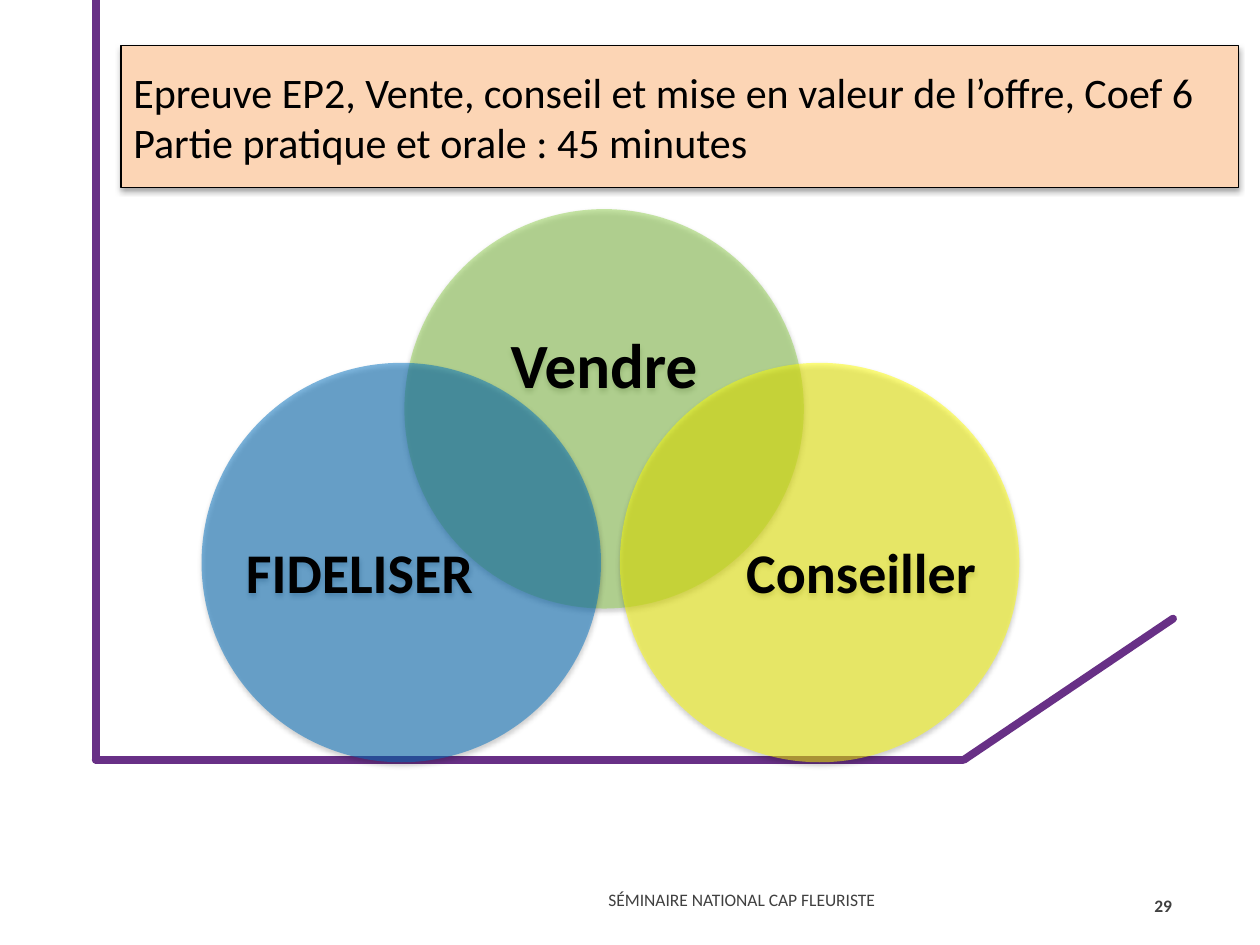
from lxml.etree import SubElement
from pptx import Presentation
from pptx.dml.color import RGBColor
from pptx.enum.shapes import MSO_CONNECTOR, MSO_SHAPE
from pptx.enum.text import MSO_ANCHOR, PP_ALIGN
from pptx.oxml.ns import qn
from pptx.util import Inches, Pt

THEME = {
    "font": "Calibri", "text": "000000", "muted": "404040",
    "frame": "683086", "banner": "FCD5B5",
    "green": "92D050", "yellow": "FFFF00", "blue": "0070C0",
    "title_size": 24, "small_size": 10, "frame_width": 4.5,
}

TITLE = ("Epreuve EP2, Vente, conseil et mise en valeur de l’offre, Coef 6\v"
         "Partie pratique et orale : 45 minutes")
FOOTER = "SÉMINAIRE NATIONAL CAP FLEURISTE"
PAGE_NUMBER = "29"

FRAME_LINES = [
    ((0.76, 6.03), (7.64, 6.03)),
    ((7.65, 6.03), (9.31, 4.91)),
    ((0.76, 6.02), (0.76, 0)),
]

DIAMETER = 3.17
# label, colour, size, (left, top), shift of the label from the circle's centre
CIRCLES = [
    ("Vendre", "green", 36, (3.21, 1.66), (0, -0.32)),
    ("Conseiller", "yellow", 32, (4.92, 2.88), (0.33, 0.1)),
    ("FIDELISER", "blue", 32, (1.6, 2.88), (-0.33, 0.1)),
]


def color(name):
    return RGBColor.from_string(THEME[name])


def add_shadow(shape, opacity, distance):
    """Drop a soft black shadow straight down; opacity in percent."""
    shape.shadow.inherit = False
    effects = shape._element.spPr.find(qn("a:effectLst"))
    shadow = SubElement(effects, qn("a:outerShdw"), blurRad=str(Pt(3.1)),
                        dist=str(Pt(distance)), dir="5400000", rotWithShape="0")
    black = SubElement(shadow, qn("a:srgbClr"), val="000000")
    SubElement(black, qn("a:alpha"), val=str(opacity * 1000))


def fill_shape(shape, name, opacity=100):
    shape.fill.solid()
    shape.fill.fore_color.rgb = color(name)
    if opacity < 100:
        tint = shape._element.spPr.find(qn("a:solidFill"))[0]
        SubElement(tint, qn("a:alpha"), val=str(opacity * 1000))


def write(shape, text, size, tone="text", bold=False, align=PP_ALIGN.LEFT,
          spacing=None, wrap=True):
    frame = shape.text_frame
    frame.word_wrap = wrap
    frame.vertical_anchor = MSO_ANCHOR.MIDDLE
    frame.text = text
    para = frame.paragraphs[0]
    para.alignment = align
    para.line_spacing = spacing
    for span in para.runs:
        span.font.color.rgb = color(tone)
        formats = {"name": THEME["font"], "size": Pt(size), "bold": bold}
        for key, value in formats.items():
            setattr(span.font, key, value)


def add_frame_line(page, start, end):
    line = page.shapes.add_connector(
        MSO_CONNECTOR.STRAIGHT, *map(Inches, start + end))
    line.line.color.rgb = color("frame")
    line.line.width = Pt(THEME["frame_width"])
    properties = line._element.spPr
    properties.find(qn("a:ln")).set("cap", "rnd")
    SubElement(properties, qn("a:effectLst"))


def add_circle(page, label, tone, size, corner, shift):
    circle = page.shapes.add_shape(
        MSO_SHAPE.OVAL, *map(Inches, corner + (DIAMETER, DIAMETER)))
    fill_shape(circle, tone, opacity=50)
    circle.line.fill.background()
    add_shadow(circle, 38, 1.6)
    write(circle, label, size, bold=True, align=PP_ALIGN.CENTER,
          spacing=0.9, wrap=False)
    # A margin on one side moves the centred label by half of it
    across, down = shift
    margins = {"left": across, "right": -across, "top": down, "bottom": -down}
    for side, offset in margins.items():
        setattr(circle.text_frame, f"margin_{side}", Inches(max(2 * offset, 0)))


def add_banner(page):
    banner = page.shapes.add_shape(
        MSO_SHAPE.RECTANGLE, *map(Inches, (0.96, 0.36, 8.87, 1.13)))
    fill_shape(banner, "banner")
    banner.line.color.rgb = color("text")
    banner.line.width = Pt(0.75)
    add_shadow(banner, 35, 1.8)
    write(banner, TITLE, THEME["title_size"])


def main():
    deck = Presentation()
    deck.slide_width, deck.slide_height = Inches(10), Inches(7.5)
    page = deck.slides.add_slide(deck.slide_layouts[6])

    for start, end in FRAME_LINES:
        add_frame_line(page, start, end)

    footer = page.shapes.add_textbox(*map(Inches, (4.73, 6.93, 3.75, 0.4)))
    write(footer, FOOTER, THEME["small_size"], "muted", spacing=Pt(13.2))
    number = page.shapes.add_textbox(*map(Inches, (9.02, 6.99, 0.38, 0.4)))
    write(number, PAGE_NUMBER, THEME["small_size"], "muted", bold=True,
          align=PP_ALIGN.RIGHT)

    for circle in CIRCLES:
        add_circle(page, *circle)
    add_banner(page)
    deck.save("out.pptx")


if __name__ == "__main__":
    main()
